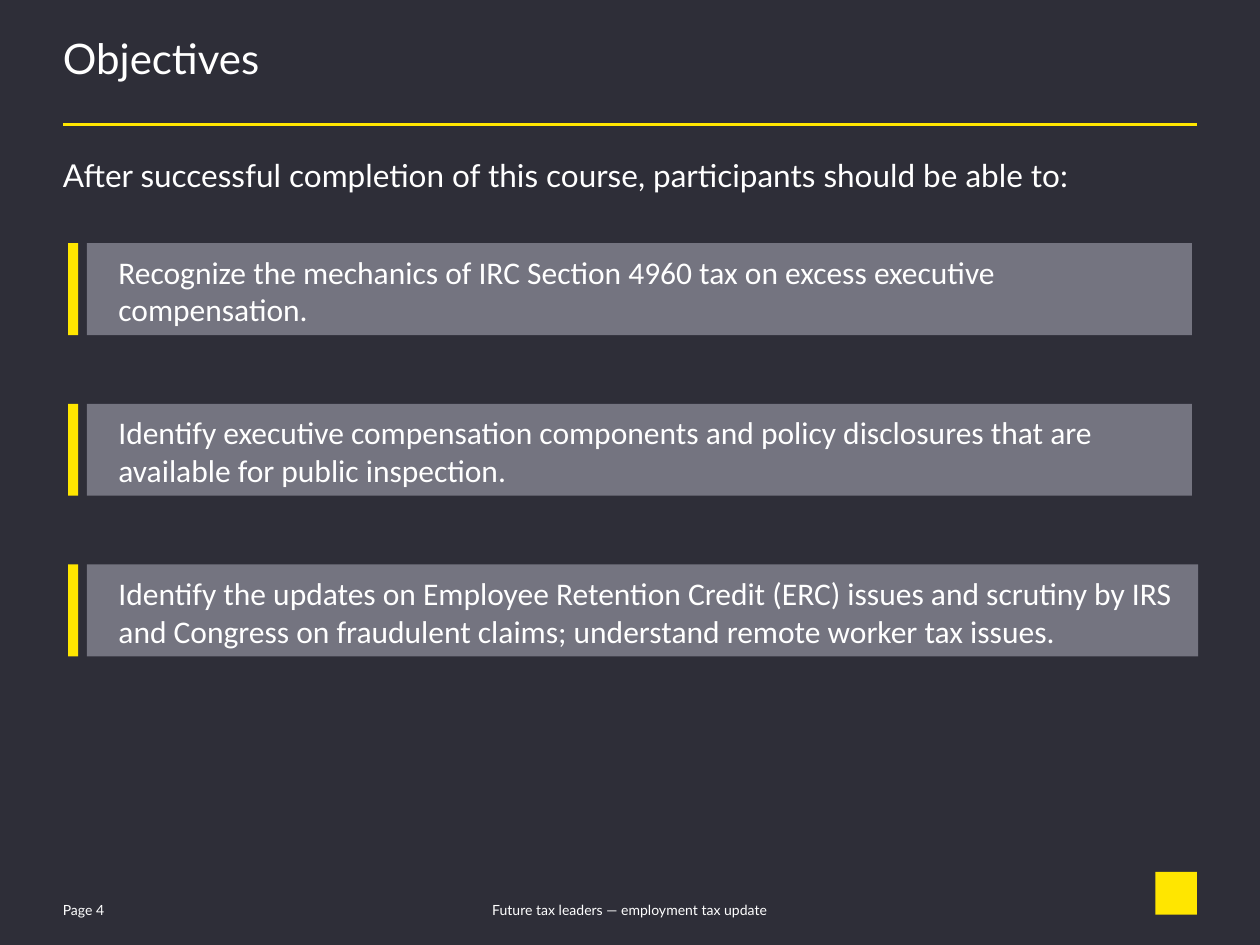
from lxml import etree
from pptx import Presentation
from pptx.dml.color import RGBColor
from pptx.enum import shapes, text
from pptx.oxml.ns import qn
from pptx.util import Inches, Pt

DARK = RGBColor(0x2E, 0x2E, 0x38)
GREY = RGBColor(0x74, 0x74, 0x80)
YELLOW = RGBColor(0xFF, 0xE6, 0x00)
WHITE = RGBColor(0xFF, 0xFF, 0xFF)

OBJECTIVES = [
    ("Recognize the mechanics of IRC Section 4960 tax on excess executive compensation.", 8.77),
    ("Identify executive compensation components and policy disclosures that are "
     "available for public inspection.", 8.77),
    ("Identify the updates on Employee Retention Credit (ERC) issues and scrutiny by IRS "
     "and Congress on fraudulent claims; understand remote worker tax issues.", 8.82),
]
FIRST_TOP, PITCH, BAR_HEIGHT = 1.93, 1.275, 0.73


def write(shape, wording, size, font="Lato", align=text.PP_ALIGN.LEFT,
          anchor=text.MSO_ANCHOR.TOP, insets=(0, 0, 0, 0)):
    """Put one formatted paragraph in a shape and return it."""
    frame = shape.text_frame
    frame.word_wrap = True
    frame.vertical_anchor = anchor
    (frame.margin_left, frame.margin_top,
     frame.margin_right, frame.margin_bottom) = map(Inches, insets)
    paragraph = frame.paragraphs[0]
    paragraph.text = wording
    paragraph.alignment = align
    for run in paragraph.runs:
        run.font.size = Pt(size)
        run.font.name = font
        run.font.color.rgb = WHITE
    return paragraph


def add_text(slide, box, wording, size, **style):
    """Add a text box and return its paragraph."""
    return write(slide.shapes.add_textbox(*map(Inches, box)), wording, size, **style)


def add_bar(slide, box, color):
    """Add a flat rectangle without an outline."""
    bar = slide.shapes.add_shape(shapes.MSO_SHAPE.RECTANGLE, *map(Inches, box))
    bar.shadow.inherit = False
    bar.fill.solid()
    bar.fill.fore_color.rgb = color
    bar.line.fill.background()
    return bar


def add_rule(slide, left, right, top):
    """Add the yellow line under the title."""
    rule = slide.shapes.add_connector(
        shapes.MSO_CONNECTOR.STRAIGHT, *map(Inches, (left, top, right, top)))
    rule.line.color.rgb = YELLOW
    rule.line.width = Pt(1.5)
    etree.SubElement(rule._element.spPr, qn("a:effectLst"))


def add_objective(slide, top, wording, width):
    """Add a grey panel with its text and yellow marker."""
    panel = add_bar(slide, (0.69, top, width, BAR_HEIGHT), GREY)
    write(panel, wording, 18, font="Calibri", anchor=text.MSO_ANCHOR.MIDDLE,
          insets=(0.25, 0.07, 0.05, 0.05))
    add_bar(slide, (0.54, top, 0.08, BAR_HEIGHT), YELLOW)


def add_footer(slide):
    """Add the page number, course name and emblem block."""
    style = dict(anchor=text.MSO_ANCHOR.MIDDLE, insets=(0.1, 0.05, 0.1, 0.05))
    add_text(slide, (0.4, 7.12, 0.73, 0.2), "Page 4", 8, **style)
    add_text(slide, (3.31, 7.12, 3.38, 0.2), "Future tax leaders — employment tax update", 8,
             align=text.PP_ALIGN.CENTER, **style)
    add_bar(slide, (9.17, 6.92, 0.33, 0.34), YELLOW)


def main():
    """Build and save the slide."""
    deck = Presentation()
    deck.slide_width, deck.slide_height = Inches(10), Inches(7.5)
    slide = deck.slides.add_slide(deck.slide_layouts[6])
    slide.background.fill.solid()
    slide.background.fill.fore_color.rgb = DARK

    add_footer(slide)
    add_rule(slide, 0.5, 9.5, 0.99)
    title = add_text(slide, (0.5, 0.32, 9, 0.65), "Objectives", 24)
    title.line_spacing = 0.85
    add_text(slide, (0.5, 1.24, 9, 5.41),
             "After successful completion of this course, participants should be able to:", 18)
    for row, (wording, width) in enumerate(OBJECTIVES):
        add_objective(slide, FIRST_TOP + row * PITCH, wording, width)

    deck.save("out.pptx")


if __name__ == "__main__":
    main()
